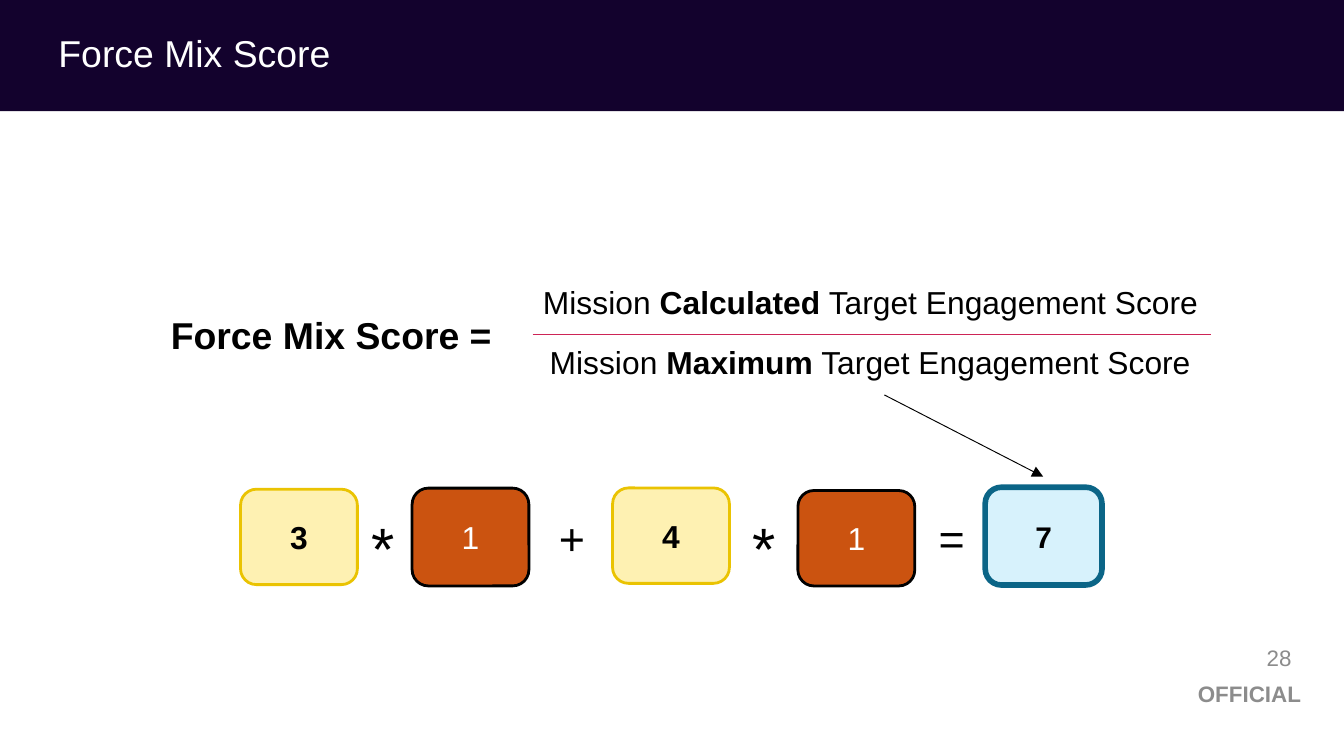
"""Build the Force Mix Score slide."""
from pptx import Presentation as Deck
from pptx.dml.color import RGBColor as RGB
from pptx.enum.shapes import MSO_CONNECTOR as Conn, MSO_SHAPE as Kind
from pptx.enum.text import MSO_ANCHOR as Anchor, PP_ALIGN as Align
from pptx.oxml.ns import qn
from pptx.util import Pt
from lxml.etree import SubElement as Sub

NAVY = RGB(0x13, 0x02, 0x2D)
WHITE = RGB(0xFF, 0xFF, 0xFF)
BLACK = RGB(0, 0, 0)
GREY = RGB(0x8C, 0x8C, 0x8C)
RUST = RGB(0xCB, 0x53, 0x10)
CREAM = RGB(0xFE, 0xF1, 0xB2)
GOLD = RGB(0xEA, 0xC3, 0x02)
SKY = RGB(0xD7, 0xF2, 0xFC)
TEAL = RGB(0x0B, 0x65, 0x87)
PINK = RGB(0xCD, 0x24, 0x56)


def style(run, size, color, bold=False):
    """Set the font of one run."""
    font = run.font
    font.name, font.size, font.bold = "Arial", Pt(size), bold
    font.color.rgb = color


def add_text(slide, box, parts, size, color=BLACK, align=Align.LEFT,
             anchor=Anchor.TOP, left=7.2, right=7.2, space=1.0):
    """Add a one-line text box from (text, bold) parts."""
    frame = slide.shapes.add_textbox(*map(Pt, box)).text_frame
    frame.word_wrap, frame.vertical_anchor = True, anchor
    frame.margin_left, frame.margin_right = Pt(left), Pt(right)
    para = frame.paragraphs[0]
    para.alignment, para.line_spacing = align, space
    for text, bold in parts:
        run = para.add_run()
        run.text = text
        style(run, size, color, bold)


def add_block(slide, kind, box, fill):
    """Add a flat filled shape without an outline."""
    shape = slide.shapes.add_shape(kind, *map(Pt, box))
    shape.shadow.inherit = False
    shape.fill.solid()
    shape.fill.fore_color.rgb = fill
    shape.line.fill.background()
    return shape


def add_tile(slide, box, text, look):
    """Add a rounded number tile."""
    fill, edge, width, color, size, bold = look
    shape = add_block(slide, Kind.ROUNDED_RECTANGLE, box, fill)
    shape.line.color.rgb, shape.line.width = edge, Pt(width)
    frame = shape.text_frame
    frame.vertical_anchor = Anchor.MIDDLE
    frame.text = text
    para = frame.paragraphs[0]
    para.alignment = Align.CENTER
    style(para.runs[0], size, color, bold)


def add_line(slide, ends, color, arrow=False):
    """Add a thin straight line, with an arrowhead if asked."""
    link = slide.shapes.add_connector(Conn.STRAIGHT, *map(Pt, ends))
    link.line.color.rgb, link.line.width = color, Pt(0.5)
    if arrow:
        Sub(link.line._get_or_add_ln(), qn("a:tailEnd"), type="triangle")
    Sub(link._element.spPr, qn("a:effectLst"))


def add_frame(slide):
    """Add the title band and the footer."""
    add_block(slide, Kind.RECTANGLE, (0, 0, 720, 59.6), NAVY)
    add_text(slide, (3, 4.3, 538.5, 51), [("Force Mix Score", False)], 20,
             WHITE, anchor=Anchor.MIDDLE, left=28.3, space=0.9)
    add_text(slide, (111, 360.7, 589, 21.6), [("OFFICIAL", True)], 12,
             GREY, Align.RIGHT, Anchor.MIDDLE, right=3)
    add_text(slide, (537, 344.2, 162, 16.6), [("28", False)], 12,
             GREY, Align.RIGHT, Anchor.MIDDLE)


def add_ratio(slide):
    """Add the formula as a fraction."""
    add_text(slide, (85, 166.3, 193, 29), [("Force Mix Score =", True)], 20,
             left=6.5, right=6.5, space=0.9)
    for x, y, word in ((284.4, 150.5, "Calculated"), (288, 182.2, "Maximum")):
        parts = [("Mission ", False), (word, True),
                 (" Target Engagement Score", False)]
        add_text(slide, (x, y, 372, 27), parts, 17,
                 left=6.5, right=6.5, space=0.9)
    add_line(slide, (285.3, 179.2, 648.7, 179.2), PINK)
    add_line(slide, (473.8, 211.6, 558.9, 255.4), BLACK, True)


def add_sum(slide):
    """Add the worked sum of tiles and operators."""
    unit = (RUST, BLACK, 1.5, WHITE, 17, False)
    count = (CREAM, GOLD, 1.5, BLACK, 17, True)
    total = (SKY, TEAL, 3, BLACK, 16, True)
    tiles = ((128.9, 262.1, 51.1, "3", count), (220.8, 261.5, 52.4, "1", unit),
             (328.2, 261.4, 51.1, "4", count), (427.5, 262.8, 51.1, "1", unit),
             (527.8, 261, 52.4, "7", total))
    for x, y, high, text, look in tiles:
        add_tile(slide, (x, y, 62.6, high), text, look)
    signs = ((192.2, "*", 32), (292.3, "+", 24), (396, "*", 32),
             (495.8, "=", 24))
    for x, text, size in signs:
        add_text(slide, (x, 270, 24, size * 1.4), [(text, False)], size,
                 right=0)


def main():
    """Build and save the slide."""
    deck = Deck()
    deck.slide_width, deck.slide_height = Pt(720), Pt(405)
    slide = deck.slides.add_slide(deck.slide_layouts[6])
    add_frame(slide)
    add_ratio(slide)
    add_sum(slide)
    deck.save("out.pptx")


if __name__ == "__main__":
    main()
